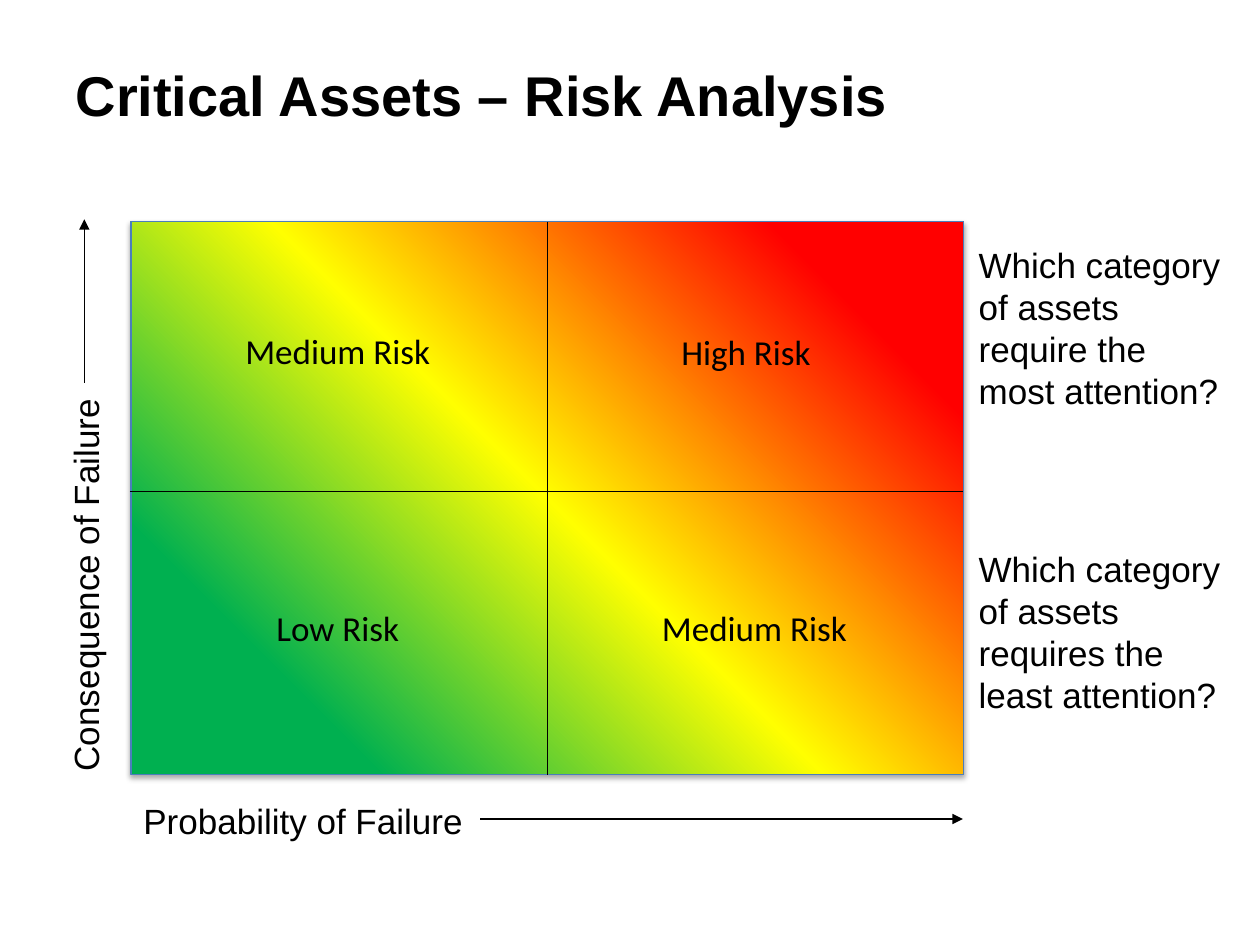
from lxml import etree
from copy import deepcopy
from pptx import Presentation
from pptx.dml.color import RGBColor
from pptx.enum.shapes import MSO_CONNECTOR, MSO_SHAPE
from pptx.enum.text import MSO_ANCHOR, PP_ALIGN
from pptx.oxml.ns import qn
from pptx.util import Cm, Pt

RECT = MSO_SHAPE.RECTANGLE
LINE = MSO_CONNECTOR.STRAIGHT
LEFT, CENTER = PP_ALIGN.LEFT, PP_ALIGN.CENTER
TOP, MIDDLE = MSO_ANCHOR.TOP, MSO_ANCHOR.MIDDLE

BLACK = "000000"
HEAT = [(0.18, "00B050"), (0.5, "FFFF00"), (0.86, "FF0000")]
RISKS = [
    ("Medium Risk", 2.62, 6.5),
    ("High Risk", 10.85, 6.53),
    ("Low Risk", 2.62, 12.09),
    ("Medium Risk", 11.02, 12.09),
]
ASKS = [
    "Which category of assets require the most attention?",
    "Which category of assets requires the least attention?",
]


def paint(color, code):
    color.rgb = RGBColor.from_string(code)


def add_run(para, text, size=20, font="Arial", bold=False):
    run = para.add_run()
    run.text = text
    run.font.size = Pt(size)
    run.font.name = font
    run.font.bold = bold
    paint(run.font.color, BLACK)


def add_title(slide, text):
    title = slide.shapes.title
    title.left, title.top = Cm(1.27), Cm(0.3)
    title.width, title.height = Cm(22.86), Cm(3.18)
    title.text_frame.vertical_anchor = MIDDLE
    para = title.text_frame.paragraphs[0]
    para.alignment = LEFT
    add_run(para, text, 32, bold=True)


def add_text(slide, box, texts, font="Arial", align=LEFT, anchor=TOP, gap=0):
    """Add a text box with one paragraph per text, gap points apart."""
    shape = slide.shapes.add_textbox(*map(Cm, box))
    frame = shape.text_frame
    frame.word_wrap = True
    frame.vertical_anchor = anchor
    for i, text in enumerate(texts):
        para = frame.add_paragraph() if i else frame.paragraphs[0]
        para.alignment = align
        if i:
            para.space_before = Pt(gap)
        add_run(para, text, font=font)
    return shape


def add_line(slide, start, end, arrow=False):
    line = slide.shapes.add_connector(LINE, *map(Cm, start + end))
    paint(line.line.color, BLACK)
    line.line.width = Pt(0.75)
    props = line._element.spPr
    if arrow:
        etree.SubElement(props.find(qn("a:ln")), qn("a:tailEnd"), type="triangle")
    etree.SubElement(props, qn("a:effectLst"))
    return line


def add_shadow(shape):
    shape.shadow.inherit = False
    effects = shape._element.spPr.find(qn("a:effectLst"))
    outer = etree.SubElement(
        effects, qn("a:outerShdw"), blurRad=str(Pt(3.1)), dist=str(Pt(1.8)),
        dir="5400000", rotWithShape="0")
    color = etree.SubElement(outer, qn("a:srgbClr"), val=BLACK)
    etree.SubElement(color, qn("a:alpha"), val="35000")


def add_map(slide, box):
    """Add the green to red rectangle behind the four quadrants."""
    shape = slide.shapes.add_shape(RECT, *map(Cm, box))
    shape.fill.gradient()
    shape.fill.gradient_angle = 45
    # The default gradient has two stops; a third is needed
    stops = shape._element.spPr.find(qn("a:gradFill")).find(qn("a:gsLst"))
    stops.append(deepcopy(stops[0]))
    for stop, (place, code) in zip(shape.fill.gradient_stops, HEAT):
        stop.position = place
        paint(stop.color, code)
    paint(shape.line.color, "4B7EBC")
    shape.line.width = Pt(0.75)
    add_shadow(shape)
    return shape


def main():
    deck = Presentation()
    deck.slide_width, deck.slide_height = Cm(25.4), Cm(19.05)
    slide = deck.slides.add_slide(deck.slide_layouts[5])
    add_title(slide, "Critical Assets – Risk Analysis")

    # Axes
    add_line(slide, (1.7, 7.72), (1.7, 4.42), arrow=True)
    label = add_text(slide, (1.17, 7.72, 1.37, 8.08), ["Consequence of Failure"])
    label.text_frame._txBody.bodyPr.set("vert", "vert270")
    add_line(slide, (9.68, 16.51), (19.41, 16.51), arrow=True)
    add_text(slide, (2.64, 16, 7.32, 1.12), ["Probability of Failure"])

    # Questions
    add_text(slide, (19.48, 4.78, 5.54, 10.08), ASKS, gap=78)

    # Risk map with its dividing lines
    heat = add_map(slide, (2.64, 4.47, 16.79, 11.15))
    split = add_line(slide, (11.03, 4.47), (11.03, 15.62))
    split.begin_connect(heat, 0)
    split.end_connect(heat, 2)
    add_line(slide, (2.62, 9.91), (19.41, 9.91))

    # Quadrant labels
    for text, left, top in RISKS:
        add_text(slide, (left, top, 8.38, 1.12), [text], "Calibri", CENTER, MIDDLE)

    deck.save("out.pptx")


if __name__ == "__main__":
    main()
